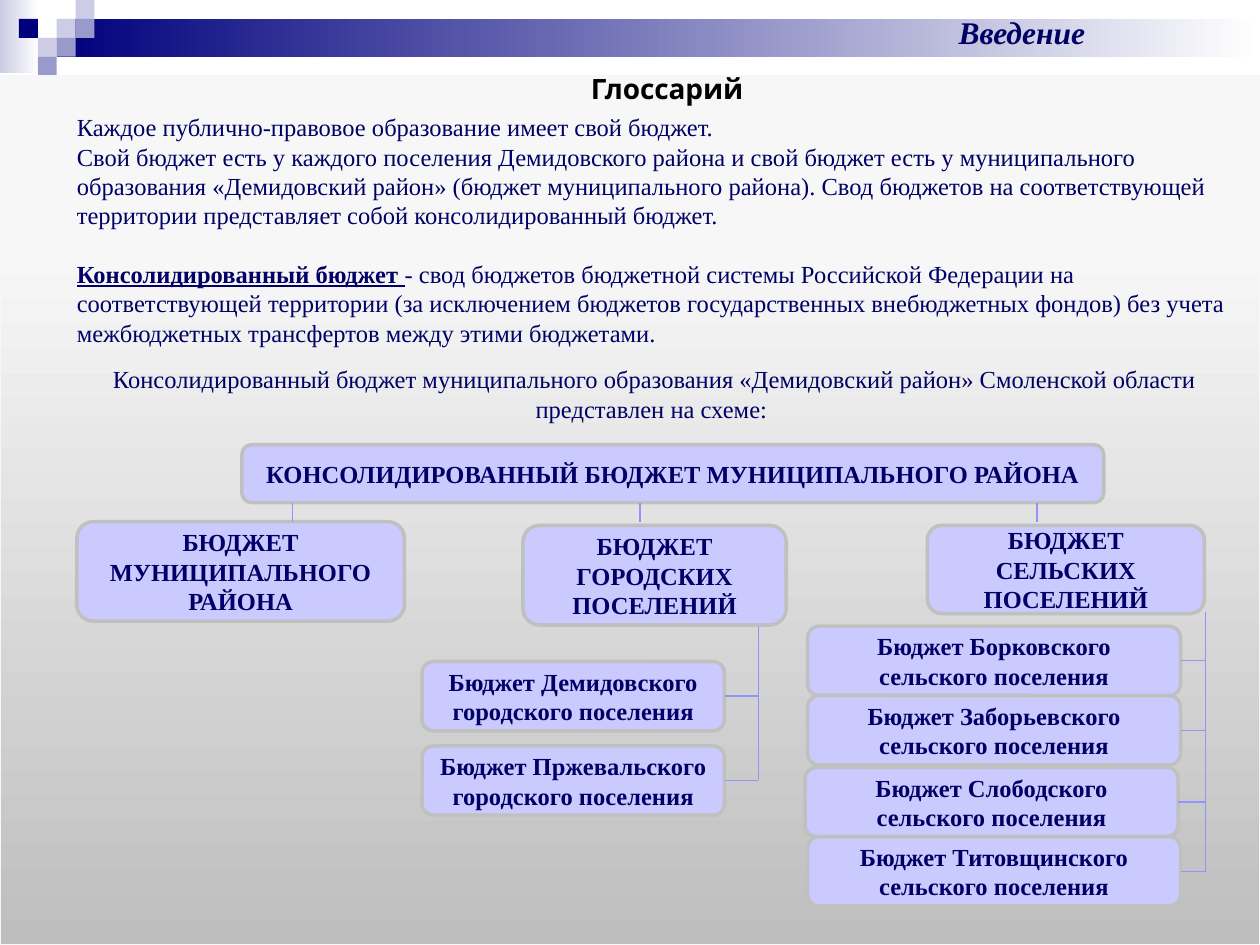
"""Build the glossary slide about the consolidated budget of a municipal district."""
from lxml.etree import SubElement
from pptx import Presentation
from pptx.dml.color import RGBColor
from pptx.enum.shapes import MSO_CONNECTOR as WIRE, MSO_SHAPE as SHAPE
from pptx.enum.text import MSO_ANCHOR as ANCHOR, MSO_AUTO_SIZE as AUTO, PP_ALIGN as ALIGN
from pptx.oxml.ns import qn
from pptx.util import Inches, Pt

NAVY = RGBColor(0x00, 0x00, 0x66)
DEEP = RGBColor(0x00, 0x00, 0x7D)
BLACK = RGBColor(0x00, 0x00, 0x00)
WHITE = RGBColor(0xFF, 0xFF, 0xFF)
PALE = RGBColor(0xCC, 0xCC, 0xE6)
VIOLET = RGBColor(0x99, 0x99, 0xCC)
LILAC = RGBColor(0xCA, 0xCA, 0xFF)
SILVER = RGBColor(0xC0, 0xC0, 0xC0)
SMOKE = RGBColor(0xBE, 0xBE, 0xBE)
MIST = RGBColor(0xF7, 0xF7, 0xF7)
WIRE_BLUE = RGBColor(0x93, 0x93, 0xFC)
SERIF = "Times New Roman"
CELL = 0.15


def add_block(kind, area, colors, angle=0, reach=1):
    block = page.shapes.add_shape(kind, *map(Inches, area))
    block.shadow.inherit = False
    block.line.fill.background()
    if len(colors) == 1:
        block.fill.solid()
        block.fill.fore_color.rgb = colors[0]
    else:
        block.fill.gradient()
        block.fill.gradient_angle = angle
        for stop, color, position in zip(block.fill.gradient_stops, colors, (0, reach)):
            stop.color.rgb = color
            stop.position = position
    return block


def add_span(para, text, color=NAVY, **style):
    span = para.add_run()
    span.text = text
    span.font.color.rgb = color
    for name, value in {"name": SERIF, "size": Pt(14), "bold": False, **style}.items():
        setattr(span.font, name, value)


deck = Presentation()
deck.slide_width, deck.slide_height = Inches(10), Inches(7.5)
page = deck.slides.add_slide(deck.slide_layouts[1])

add_block(SHAPE.RECTANGLE, (0, 0, 0.31, 0.58), (PALE, WHITE))
add_block(SHAPE.RECTANGLE, (3 * CELL, CELL, 10 - 3 * CELL, 2 * CELL), (DEEP, WHITE))
mosaic = [(3, 1, PALE), (4, 0, PALE), (4, 1, VIOLET), (2, 2, PALE),
          (1, 1, DEEP), (3, 2, VIOLET), (2, 3, VIOLET)]
for column, row, color in mosaic:
    add_block(SHAPE.RECTANGLE, (column * CELL, row * CELL, CELL, CELL), (color,))
backdrop = add_block(SHAPE.FLOWCHART_PROCESS, (0, 0.6, 10, 6.9), (SMOKE, MIST), 90, 0.8)
backdrop.line.color.rgb = MIST
backdrop.line.width = Pt(0.75)

title, body = page.placeholders
heading = page.shapes.add_textbox(0, 0, 0, 0)
frames = [(title, (6.26, 0.05, 3.7, 0.4)), (heading, (1.6, 0.52, 7.39, 0.38)),
          (body, (0.51, 0.84, 9.37, 2.69))]
for box, area in frames:
    page.shapes._spTree.append(box._element)
    box.left, box.top, box.width, box.height = map(Inches, area)
    settings = {"word_wrap": True, "auto_size": AUTO.NONE, "vertical_anchor": ANCHOR.TOP}
    for name, value in settings.items():
        setattr(box.text_frame, name, value)

captions = [(title, "Введение", {"size": Pt(18), "bold": True, "italic": True}),
            (heading, "Глоссарий", {"size": Pt(16), "bold": True, "name": "Comic Neue",
                                    "color": BLACK})]
for box, text, style in captions:
    para = box.text_frame.paragraphs[0]
    para.alignment = ALIGN.CENTER
    add_span(para, text, **style)

story = [
    (0, ALIGN.LEFT, [("Каждое публично-правовое образование имеет свой бюджет.", {})]),
    (0, ALIGN.LEFT, [("Свой бюджет есть у каждого поселения Демидовского района и свой бюджет "
                      "есть у муниципального образования «Демидовский район» (бюджет "
                      "муниципального района). Свод бюджетов на соответствующей территории "
                      "представляет собой консолидированный бюджет.", {})]),
    (16.5, ALIGN.LEFT, [("Консолидированный бюджет ", {"bold": True, "underline": True}),
                        ("- свод бюджетов бюджетной системы Российской Федерации на "
                         "соответствующей территории (за исключением бюджетов государственных "
                         "внебюджетных фондов) без учета межбюджетных трансфертов между этими "
                         "бюджетами.", {})]),
    (10, ALIGN.CENTER, [("Консолидированный бюджет муниципального образования «Демидовский "
                         "район» Смоленской области представлен на схеме: ", {})]),
]
for index, (gap, alignment, spans) in enumerate(story):
    para = body.text_frame.add_paragraph() if index else body.text_frame.paragraphs[0]
    para.alignment = alignment
    para.space_before = Pt(gap)
    props = para._p.get_or_add_pPr()
    props.set("marL", "0")
    props.set("indent", "0")
    SubElement(props, qn("a:buNone"))
    for text, style in spans:
        add_span(para, text, **style)

budgets = [
    ("КОНСОЛИДИРОВАННЫЙ БЮДЖЕТ МУНИЦИПАЛЬНОГО РАЙОНА", (1.92, 3.53, 6.84, 0.46)),
    ("БЮДЖЕТ МУНИЦИПАЛЬНОГО РАЙОНА", (0.61, 4.14, 2.6, 0.79)),
    ("БЮДЖЕТ ГОРОДСКИХ ПОСЕЛЕНИЙ", (4.15, 4.17, 2.09, 0.79)),
    ("БЮДЖЕТ СЕЛЬСКИХ ПОСЕЛЕНИЙ", (7.36, 4.17, 2.2, 0.7)),
]
towns = [("Демидовского", 5.25), ("Пржевальского", 5.92)]
villages = [("Борковского", 6.41, 4.97), ("Заборьевского", 6.41, 5.52),
            ("Слободского", 6.39, 6.09), ("Титовщинского", 6.41, 6.64)]
budgets += [(f"Бюджет {name} городского поселения", (3.35, top, 2.4, 0.55))
            for name, top in towns]
budgets += [(f"Бюджет {name} сельского поселения", (left, top, 2.96, 0.55))
            for name, left, top in villages]

boxes = []
for text, area in budgets:
    box = add_block(SHAPE.ROUNDED_RECTANGLE, area, (LILAC,))
    box.line.color.rgb = SILVER
    box.line.width = Pt(2)
    frame = box.text_frame
    frame.word_wrap = True
    frame.vertical_anchor = ANCHOR.MIDDLE
    inset = 0.05 if "городского" in text else 0.1
    frame.margin_left = frame.margin_right = Inches(inset)
    frame.paragraphs[0].alignment = ALIGN.CENTER
    add_span(frame.paragraphs[0], text, bold=True)
    boxes.append(box)

town_trunk, village_trunk = 6.02, 9.57
wires = [(None, x, 3.99, x, 4.14) for x in (2.32, 5.08, 8.23)]
wires += [(None, town_trunk, 4.97, town_trunk, 6.19),
          (None, village_trunk, 4.86, village_trunk, 6.92)]
for box, (text, (left, top, width, height)) in list(zip(boxes, budgets))[4:]:
    trunk = town_trunk if "городского" in text else village_trunk
    middle = top + height / 2
    wires.append((box, left + width, middle, trunk, middle))

for box, *ends in wires:
    wire = page.shapes.add_connector(WIRE.STRAIGHT, *map(Inches, ends))
    wire.line.color.rgb = WIRE_BLUE
    wire.line.width = Pt(0.75)
    SubElement(wire._element.spPr, qn("a:effectLst"))
    if box is not None:
        wire.begin_connect(box, 3)

deck.save("out.pptx")
